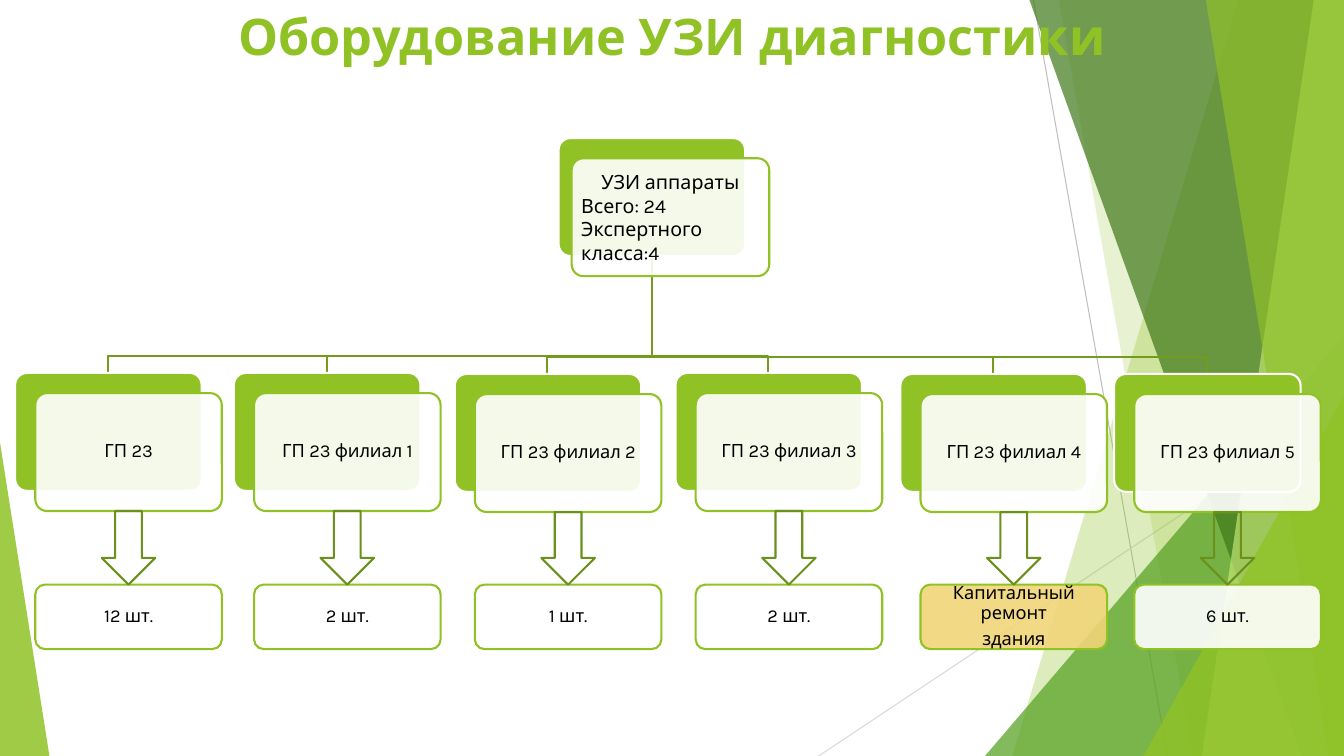
from lxml.etree import SubElement
from pptx import Presentation
from pptx.dml.color import RGBColor
from pptx.enum.shapes import MSO_CONNECTOR, MSO_SHAPE
from pptx.enum.text import MSO_ANCHOR, PP_ALIGN
from pptx.oxml.ns import qn
from pptx.util import Inches, Pt

COLORS = {
    "lime": "90C226", "green": "54A021", "forest": "3F7819", "pale": "C0E474",
    "branch": "739B1E", "arrow": "6B901C", "white": "FFFFFF", "black": "000000",
    "sand": "F0D578", "gray": "BFBFBF", "light_gray": "D9D9D9",
}
WIDTH, HEIGHT = 13.33, 7.5


class SlideBuilder:
    font = "Karla"
    line_width = 1.5

    def __init__(self, slide):
        self.slide = slide
        self.shapes = slide.shapes

    def color(self, name):
        return RGBColor.from_string(COLORS[name])

    def paint(self, shape, fill=None, alpha=100, line=None):
        shape.shadow.inherit = False
        if fill:
            shape.fill.solid()
            shape.fill.fore_color.rgb = self.color(fill)
            if alpha < 100:
                tint = shape.element.spPr.find(qn("a:solidFill"))[0]
                SubElement(tint, qn("a:alpha")).set("val", str(alpha * 1000))
        else:
            shape.fill.background()
        if line:
            shape.line.color.rgb = self.color(line)
            shape.line.width = Pt(self.line_width)
        else:
            shape.line.fill.background()
        return shape

    def preset(self, kind, box, adjust=None, **style):
        shape = self.shapes.add_shape(kind, *map(Inches, box))
        if adjust is not None:
            shape.adjustments[0] = adjust
        return self.paint(shape, **style)

    def outline(self, points, close=True, **style):
        corners = [(Inches(x), Inches(y)) for x, y in points]
        builder = self.shapes.build_freeform(*corners[0])
        builder.add_line_segments(corners[1:], close=close)
        return self.paint(builder.convert_to_shape(), **style)

    def hairline(self, start, end, color):
        line = self.shapes.add_connector(
            MSO_CONNECTOR.STRAIGHT, *map(Inches, (*start, *end)))
        line.line.color.rgb = self.color(color)
        line.line.width = Pt(0.75)
        SubElement(line.element.spPr, qn("a:effectLst"))

    def label(self, shape, text, size, color="black", bold=False, inset=0.06,
              spacing=None, after=0, left_from=None):
        frame = shape.text_frame
        frame.word_wrap = True
        frame.vertical_anchor = MSO_ANCHOR.MIDDLE
        frame.margin_left = frame.margin_right = Inches(inset)
        frame.margin_top = frame.margin_bottom = Inches(inset)
        frame.text = text
        for index, paragraph in enumerate(frame.paragraphs):
            left = left_from is not None and index >= left_from
            paragraph.alignment = PP_ALIGN.LEFT if left else PP_ALIGN.CENTER
            paragraph.space_after = Pt(after)
            if spacing:
                paragraph.line_spacing = spacing
            for run in paragraph.runs:
                run.font.name = self.font
                run.font.size = Pt(size)
                run.font.bold = bold
                run.font.color.rgb = self.color(color)

    def title(self, text):
        box = self.shapes.add_textbox(0, 0, Inches(WIDTH), Inches(0.7))
        self.label(box, text, 36, color="lime", bold=True, inset=0)

    def card(self, box, text, size=13, fill="white", adjust=0.1, **layout):
        shape = self.preset(MSO_SHAPE.ROUNDED_RECTANGLE, box, adjust,
                            fill=fill, alpha=90, line="lime")
        self.label(shape, text, size, **layout)

    def backing(self, left, top):
        self.preset(MSO_SHAPE.ROUNDED_RECTANGLE, (left, top, 1.85, 1.17), 0.1,
                    fill="lime", line="white")


def draw_backdrop(page):
    page.hairline((10.25, 0), (11.58, HEIGHT), "gray")
    page.hairline((WIDTH, 4.03), (8.12, HEIGHT), "light_gray")

    def band(top_left, bottom_left, fill, alpha):
        page.outline([(top_left, 0), (WIDTH, 0), (WIDTH, HEIGHT),
                      (bottom_left, HEIGHT)], fill=fill, alpha=alpha)

    def wedge(left, top, width, apex, fill, alpha):
        page.preset(MSO_SHAPE.ISOSCELES_TRIANGLE,
                    (left, top, width, HEIGHT - top), apex,
                    fill=fill, alpha=alpha)

    band(12.28, 10.04, "lime", 30)
    band(10.5, 11.83, "lime", 20)
    wedge(9.77, 3.33, 3.56, 1, "green", 72)
    band(10.21, 12.91, "forest", 70)
    band(13.03, 11.92, "pale", 70)
    band(11.96, 13.18, "lime", 65)
    wedge(11.34, 3.93, 1.99, 1, "lime", 80)
    wedge(0, 4.39, 0.49, 0, "lime", 85)


def draw_tree(page):
    # Left edge, vertical offset, branch name, equipment count
    clinics = [
        (0.15, 0, "ГП 23", "12 шт."),
        (2.32, 0, "ГП 23 филиал 1", "2 шт."),
        (4.51, 0.01, "ГП 23 филиал 2", "1 шт."),
        (6.7, 0, "ГП 23 филиал 3", "2 шт."),
        (8.93, 0.01, "ГП 23 филиал 4", "Капитальный ремонт\nздания"),
        (11.05, 0.01, "ГП 23 филиал 5", "6 шт."),
    ]
    tight = {"spacing": 0.9, "after": 5}

    # Branches from the root
    trunk = 6.47
    for left, shift, _, _ in reversed(clinics):
        center, bar = left + 0.92, 3.53 + shift
        page.outline([(trunk, 2.54), (trunk, bar), (center, bar),
                      (center, 3.7 + shift)], close=False, line="branch")

    # Root card
    page.backing(5.54, 1.37)
    page.card((5.67, 1.57, 1.96, 1.17),
              "УЗИ аппараты\nВсего: 24\nЭкспертного класса:4",
              size=14, left_from=1)

    # Clinic cards, counts and arrows
    for left, shift, clinic, count in clinics:
        front = left + 0.2
        page.backing(left, 3.7 + shift)
        page.card((front, 3.9 + shift, 1.85, 1.17), clinic, **tight)
        fill = "sand" if "ремонт" in count else "white"
        page.card((front, 5.8, 1.85, 0.64), count, fill=fill, adjust=0.15,
                  **tight)
        page.preset(MSO_SHAPE.DOWN_ARROW,
                    (front + 0.66, 5.07 + shift, 0.53, 0.73 - shift),
                    line="arrow")


def main():
    deck = Presentation()
    deck.slide_width, deck.slide_height = Inches(WIDTH), Inches(HEIGHT)
    page = SlideBuilder(deck.slides.add_slide(deck.slide_layouts[6]))
    draw_backdrop(page)
    page.title("Оборудование УЗИ диагностики")
    draw_tree(page)
    deck.save("out.pptx")


if __name__ == "__main__":
    main()
